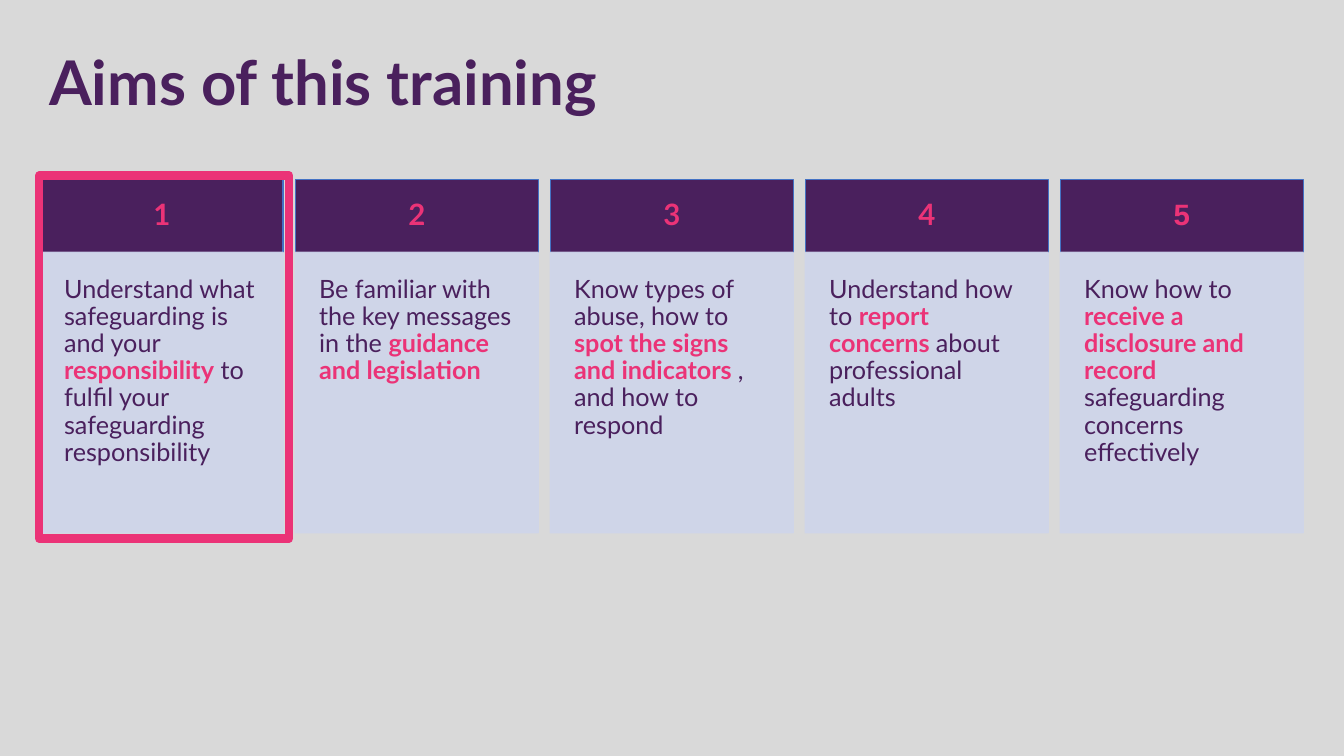
import pptx
import pptx.dml.color
import pptx.enum.shapes
import pptx.enum.text
import pptx.oxml.ns
import pptx.util
from lxml import etree

Pt = pptx.util.Pt
Align = pptx.enum.text.PP_ALIGN
Anchor = pptx.enum.text.MSO_ANCHOR

COLOURS = {
    "grey": "D9D9D9",
    "purple": "4A205D",
    "pink": "EB3377",
    "blue": "4472C4",
    "lavender": "CFD5EA",
}

# Each aim is a list of (text, highlighted) pieces
AIMS = [
    [("Understand what safeguarding is and your ", False), ("responsibility", True),
     (" to fulfil your safeguarding responsibility", False)],
    [("Be familiar with the key messages in the ", False),
     ("guidance and legislation", True)],
    [("Know types of abuse, how to ", False), ("spot the signs and indicators ", True),
     (", and how to respond", False)],
    [("Understand how to ", False), ("report concerns ", True),
     ("about professional adults", False)],
    [("Know how to ", False), ("receive a disclosure and record ", True),
     ("safeguarding concerns effectively", False)],
]


def colour(name):
    return pptx.dml.color.RGBColor.from_string(COLOURS[name])


def add_span(para, text, size=18, font="Lato", ink="purple", bold=False):
    span = para.add_run()
    span.text = text
    span.font.size = Pt(size)
    span.font.name = font
    span.font.bold = bold
    span.font.color.rgb = colour(ink)


class Page:
    def __init__(self, deck):
        self.slide = deck.slides.add_slide(deck.slide_layouts[6])
        self.slide.background.fill.solid()
        self.slide.background.fill.fore_color.rgb = colour("grey")

    def title(self, text, left, top, width, height):
        box = self.slide.shapes.add_textbox(Pt(left), Pt(top), Pt(width), Pt(height))
        box.text_frame.word_wrap = True
        add_span(box.text_frame.paragraphs[0], text, size=44, bold=True)

    def rectangle(self, left, top, width, height, line, fill=None, weight=1, opacity=100):
        box = self.slide.shapes.add_shape(
            pptx.enum.shapes.MSO_SHAPE.RECTANGLE, Pt(left), Pt(top), Pt(width), Pt(height))
        box.shadow.inherit = False
        box.line.color.rgb = colour(line)
        box.line.width = Pt(weight)
        if fill:
            box.fill.solid()
            box.fill.fore_color.rgb = colour(fill)
        else:
            box.fill.background()
        if opacity < 100:
            tag = pptx.oxml.ns.qn("a:srgbClr")
            for element in box.element.spPr.iter(tag):
                alpha = etree.SubElement(element, pptx.oxml.ns.qn("a:alpha"))
                alpha.set("val", str(opacity * 1000))
        return box

    def paragraph(self, box, inset, align, anchor):
        frame = box.text_frame
        frame.word_wrap = True
        frame.vertical_anchor = anchor
        frame.margin_left = frame.margin_right = Pt(inset)
        frame.margin_top = frame.margin_bottom = Pt(inset)
        para = frame.paragraphs[0]
        para.alignment = align
        para.line_spacing = 0.9
        return para

    def card(self, number, pieces, left, number_font):
        width, top, head, body = 173.5, 128.3, 52, 200.2
        # Number band
        box = self.rectangle(left, top, width, head, "blue", "purple")
        para = self.paragraph(box, 13.5, Align.CENTER, Anchor.MIDDLE)
        add_span(para, str(number), size=21, font=number_font, ink="pink", bold=True)
        # Aim
        box = self.rectangle(left, top + head, width, body, "lavender", "lavender", opacity=90)
        para = self.paragraph(box, 17, Align.LEFT, Anchor.TOP)
        for text, highlighted in pieces:
            add_span(para, text, ink="pink" if highlighted else "purple", bold=highlighted)


def main():
    deck = pptx.Presentation()
    deck.slide_width, deck.slide_height = Pt(960), Pt(540)
    page = Page(deck)
    page.title("Aims of this training", 28, 28, 931, 58)

    # Row of aims
    for index, pieces in enumerate(AIMS):
        font = "Arial" if index == 4 else "Lato"
        page.card(index + 1, pieces, 28.8 + 182.15 * index, font)

    # Frame around the current aim
    page.rectangle(28, 125.5, 178.6, 259.2, "pink", weight=6)
    deck.save("out.pptx")


if __name__ == "__main__":
    main()
